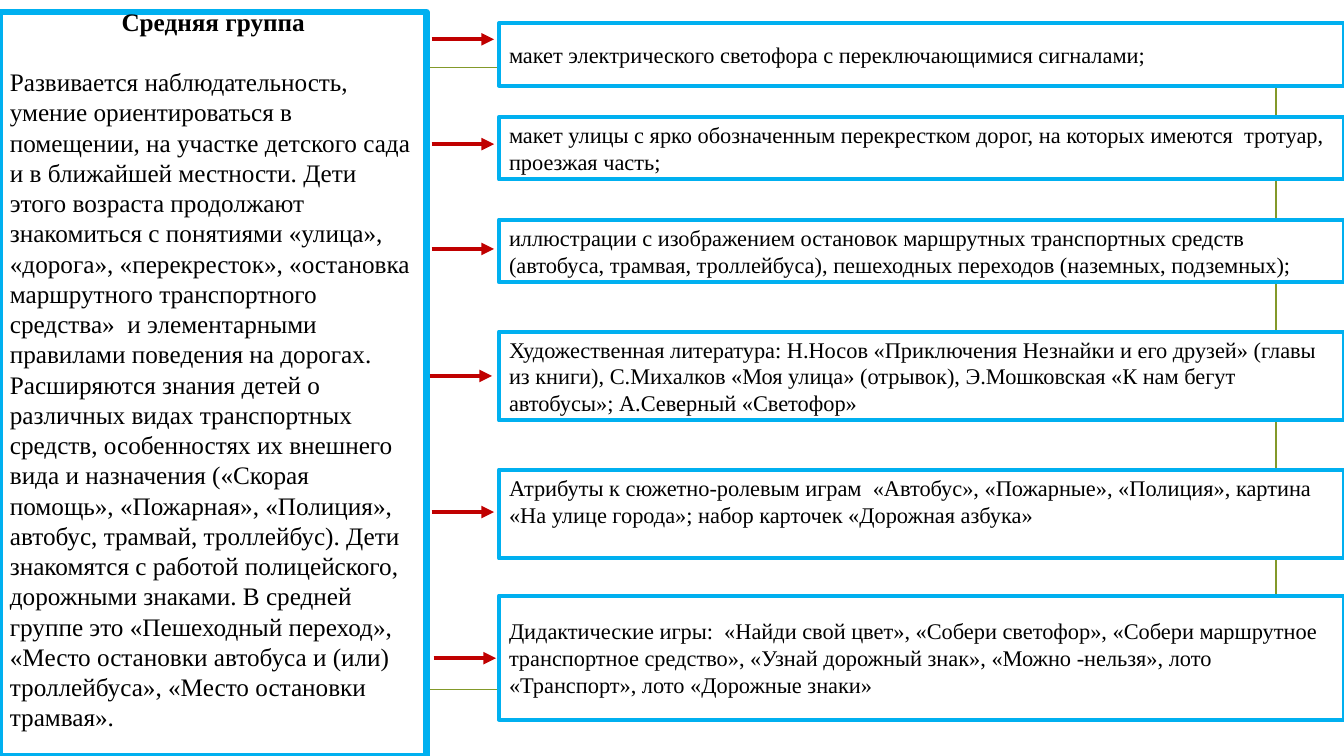
import pptx
import pptx.util
import pptx.dml.color
import pptx.enum.shapes
import pptx.enum.text
import pptx.oxml
import lxml.etree

Inches = pptx.util.Inches
Pt = pptx.util.Pt
ALIGN = pptx.enum.text.PP_ALIGN
COLORS = {"paper": "FFFFFF", "ink": "000000", "edge": "00B0F0",
          "arrow": "C00000", "frame": "83992A"}
FONT = "Times New Roman"
TITLE = "Средняя группа"
BODY = [
    "Развивается наблюдательность, умение ориентироваться в помещении, на участке детского сада и в ближайшей местности. Дети этого возраста продолжают знакомиться с понятиями «улица», «дорога», «перекресток», «остановка маршрутного транспортного средства»  и элементарными правилами поведения на дорогах. Расширяются знания детей о различных видах транспортных средств, особенностях их внешнего вида и назначения («Скорая помощь», «Пожарная», «Полиция», автобус, трамвай, троллейбус). Дети знакомятся с работой полицейского,",
    "дорожными знаками. В средней группе это «Пешеходный переход», «Место остановки автобуса и (или) троллейбуса», «Место остановки трамвая».",
]
ITEMS = [
    (0.23, 0.62, 4.28, 0.39, 0.05, "макет электрического светофора с переключающимися сигналами;"),
    (1.16, 0.62, 4.28, 1.43, 0.05, "макет улицы с ярко обозначенным перекрестком дорог, на которых имеются  тротуар, проезжая часть;"),
    (2.18, 0.62, 4.28, 2.47, 0.05, "иллюстрации с изображением остановок маршрутных транспортных средств (автобуса, трамвая, троллейбуса), пешеходных переходов (наземных, подземных);"),
    (3.29, 0.88, 4.26, 3.73, 0.05, "Художественная литература: Н.Носов «Приключения Незнайки и его друзей» (главы из книги), С.Михалков «Моя улица» (отрывок), Э.Мошковская «К нам бегут автобусы»; А.Северный «Светофор»"),
    (4.66, 0.88, 4.28, 5.08, 0.31, "Атрибуты к сюжетно-ролевым играм  «Автобус», «Пожарные», «Полиция», картина «На улице города»; набор карточек «Дорожная азбука»"),
    (5.91, 1.23, 4.3, 6.53, 0.05, "Дидактические игры:  «Найди свой цвет», «Собери светофор», «Собери маршрутное транспортное средство», «Узнай дорожный знак», «Можно -нельзя», лото «Транспорт», лото «Дорожные знаки»"),
]


def tint(name):
    return pptx.dml.color.RGBColor.from_string(COLORS[name])


def panel(slide, box, edge, width):
    shape = slide.shapes.add_shape(
        pptx.enum.shapes.MSO_SHAPE.RECTANGLE, *map(Inches, box))
    shape.shadow.inherit = False
    shape.fill.solid()
    shape.fill.fore_color.rgb = tint("paper")
    shape.line.color.rgb = tint(edge)
    shape.line.width = Pt(width)
    return shape


def write(shape, texts, size, bottom):
    frame = shape.text_frame
    frame.word_wrap = True
    frame.vertical_anchor = pptx.enum.text.MSO_ANCHOR.MIDDLE
    frame.margin_bottom = Inches(bottom)
    frame.text = "\n".join(texts)
    for para in frame.paragraphs:
        para.alignment = ALIGN.LEFT
        para.font.name = FONT
        para.font.size = Pt(size)
        para.font.color.rgb = tint("ink")
    return frame.paragraphs


def arrow(slide, left, top):
    line = slide.shapes.add_connector(
        pptx.enum.shapes.MSO_CONNECTOR.STRAIGHT,
        Inches(left), Inches(top), Inches(left + 0.62), Inches(top))
    line.line.color.rgb = tint("arrow")
    line.line.width = Pt(3)
    tag = pptx.oxml.ns.qn
    head = lxml.etree.SubElement(line.line._get_or_add_ln(), tag("a:tailEnd"))
    head.set("type", "triangle")
    lxml.etree.SubElement(line._element.spPr, tag("a:effectLst"))


def group(slide, box):
    shape = panel(slide, box, "edge", 4.5)
    title = write(shape, [TITLE, *BODY], 18, 0.35)[0]
    title.alignment = ALIGN.CENTER
    title.font.bold = True
    title.space_after = Pt(21.6)


def items(slide, left, width):
    for top, height, start, level, bottom, text in ITEMS:
        shape = panel(slide, (left, top, width, height), "edge", 3)
        write(shape, [text], 16, bottom)
        arrow(slide, start, level)


def main():
    deck = pptx.Presentation()
    deck.slide_width = Inches(13.33)
    deck.slide_height = Inches(7.5)
    slide = deck.slides.add_slide(deck.slide_layouts[6])
    panel(slide, (0.66, 0.67, 12, 6.17), "frame", 1.25)
    group(slide, (0, 0.12, 4.23, 7.38))
    items(slide, 4.95, 8.38)
    deck.save("out.pptx")


if __name__ == "__main__":
    main()
